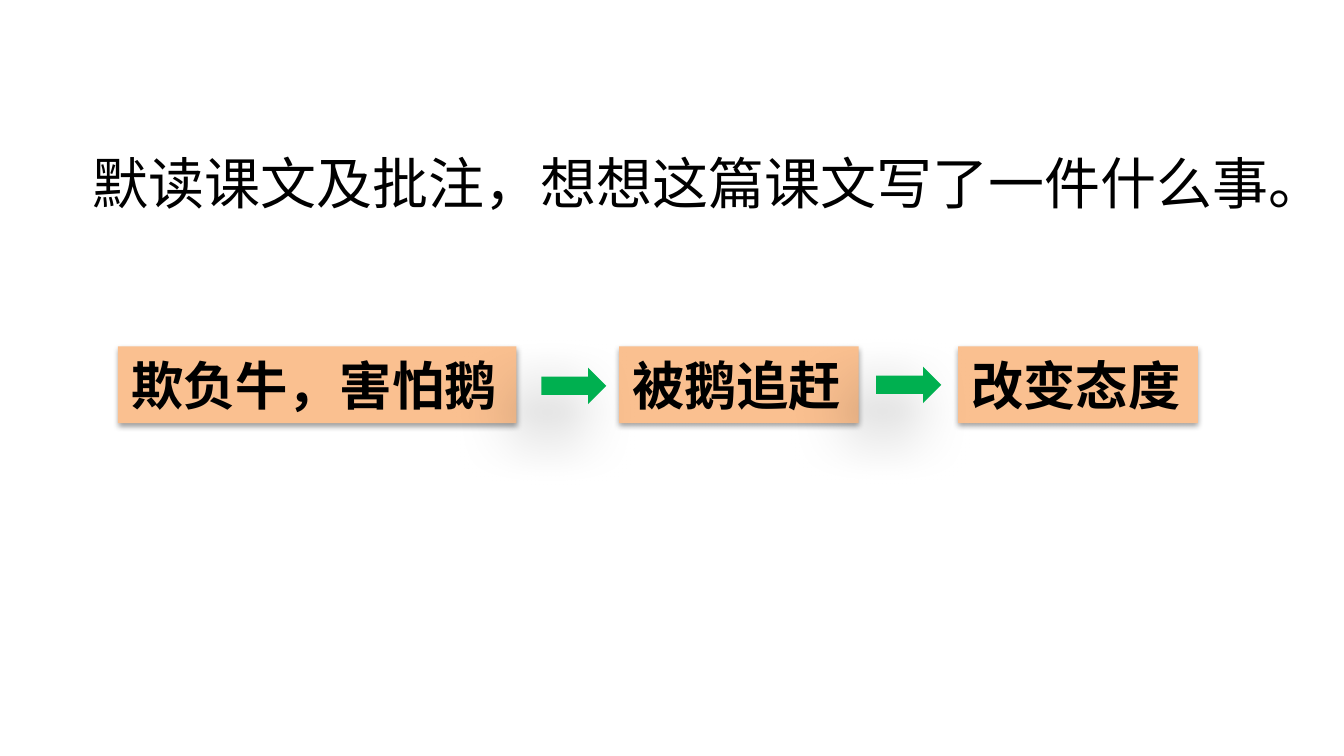
from dataclasses import dataclass

from lxml import etree
from pptx import Presentation
from pptx.dml.color import RGBColor
from pptx.enum.shapes import MSO_SHAPE
from pptx.enum.text import MSO_ANCHOR, MSO_AUTO_SIZE, PP_ALIGN
from pptx.oxml.ns import qn
from pptx.util import Cm, Pt

RECTANGLE = MSO_SHAPE.RECTANGLE
RIGHT_ARROW = MSO_SHAPE.RIGHT_ARROW
TOP = MSO_ANCHOR.TOP
FIT_SHAPE = MSO_AUTO_SIZE.SHAPE_TO_FIT_TEXT
LEFT = PP_ALIGN.LEFT

FONT = "Noto Sans CJK SC"
COLORS = {"text": "000000", "event": "FAC090", "arrow": "00B050", "shadow": "000000"}


@dataclass(frozen=True)
class Shadow:
    opacity: int
    blur: float
    distance: float
    angle: int


@dataclass(frozen=True)
class Event:
    text: str
    left: float
    width: float


@dataclass(frozen=True)
class Arrow:
    left: float
    top: float


EVENT_SHADOW = Shadow(38, 3.15, 1.57, 90)
ARROW_SHADOW = Shadow(50, 35, 20, 135)
EVENTS = [
    Event("欺负牛，害怕鹅", 2.23, 7.53),
    Event("被鹅追赶", 11.7, 4.53),
    Event("改变态度", 18.11, 4.53),
]
ARROWS = [Arrow(10.23, 6.95), Arrow(16.56, 6.93)]


def write(sp, text: str, size: int, bold: bool = False, spacing: float = 1.0) -> None:
    tf = sp.text_frame
    tf.vertical_anchor = TOP
    tf.auto_size = FIT_SHAPE
    p = tf.paragraphs[0]
    p.text = text
    p.alignment = LEFT
    p.line_spacing = spacing
    p.font.size = Pt(size)
    p.font.bold = bold
    p.font.color.rgb = RGBColor.from_string(COLORS["text"])
    p.font.name = FONT
    latin = next(tf._txBody.iter(qn("a:latin")))
    latin.addnext(etree.Element(qn("a:ea"), typeface=FONT))


def add_filled(slide, kind, left: float, top: float, width: float, height: float,
               color: str, shadow: Shadow):
    sp = slide.shapes.add_shape(kind, Cm(left), Cm(top), Cm(width), Cm(height))
    sp.fill.solid()
    sp.fill.fore_color.rgb = RGBColor.from_string(COLORS[color])
    sp.line.fill.background()
    sp.shadow.inherit = False
    effects = sp._element.spPr.find(qn("a:effectLst"))
    outer = etree.SubElement(
        effects, qn("a:outerShdw"), blurRad=str(Pt(shadow.blur)),
        dist=str(Pt(shadow.distance)), dir=str(shadow.angle * 60000), rotWithShape="0")
    tint = etree.SubElement(outer, qn("a:srgbClr"), val=COLORS["shadow"])
    etree.SubElement(tint, qn("a:alpha"), val=str(shadow.opacity * 1000))
    return sp


def add_event(slide, event: Event) -> None:
    sp = add_filled(slide, RECTANGLE, event.left, 6.55, event.width, 1.45,
                    "event", EVENT_SHADOW)
    sp.text_frame.word_wrap = False
    write(sp, event.text, 28, bold=True)


def add_arrow(slide, arrow: Arrow) -> None:
    add_filled(slide, RIGHT_ARROW, arrow.left, arrow.top, 1.23, 0.69,
               "arrow", ARROW_SHADOW)


def main() -> None:
    prs = Presentation()
    prs.slide_width, prs.slide_height = Cm(25.4), Cm(14.29)
    s = prs.slides.add_slide(prs.slide_layouts[6])
    question = s.shapes.add_textbox(Cm(1.5), Cm(2.31), Cm(22.81), Cm(1.93))
    question.text_frame.word_wrap = True
    write(question, "默读课文及批注，想想这篇课文写了一件什么事。", 30, spacing=1.3)
    for event in EVENTS:
        add_event(s, event)
    for arrow in ARROWS:
        add_arrow(s, arrow)
    prs.save("out.pptx")


if __name__ == "__main__":
    main()
